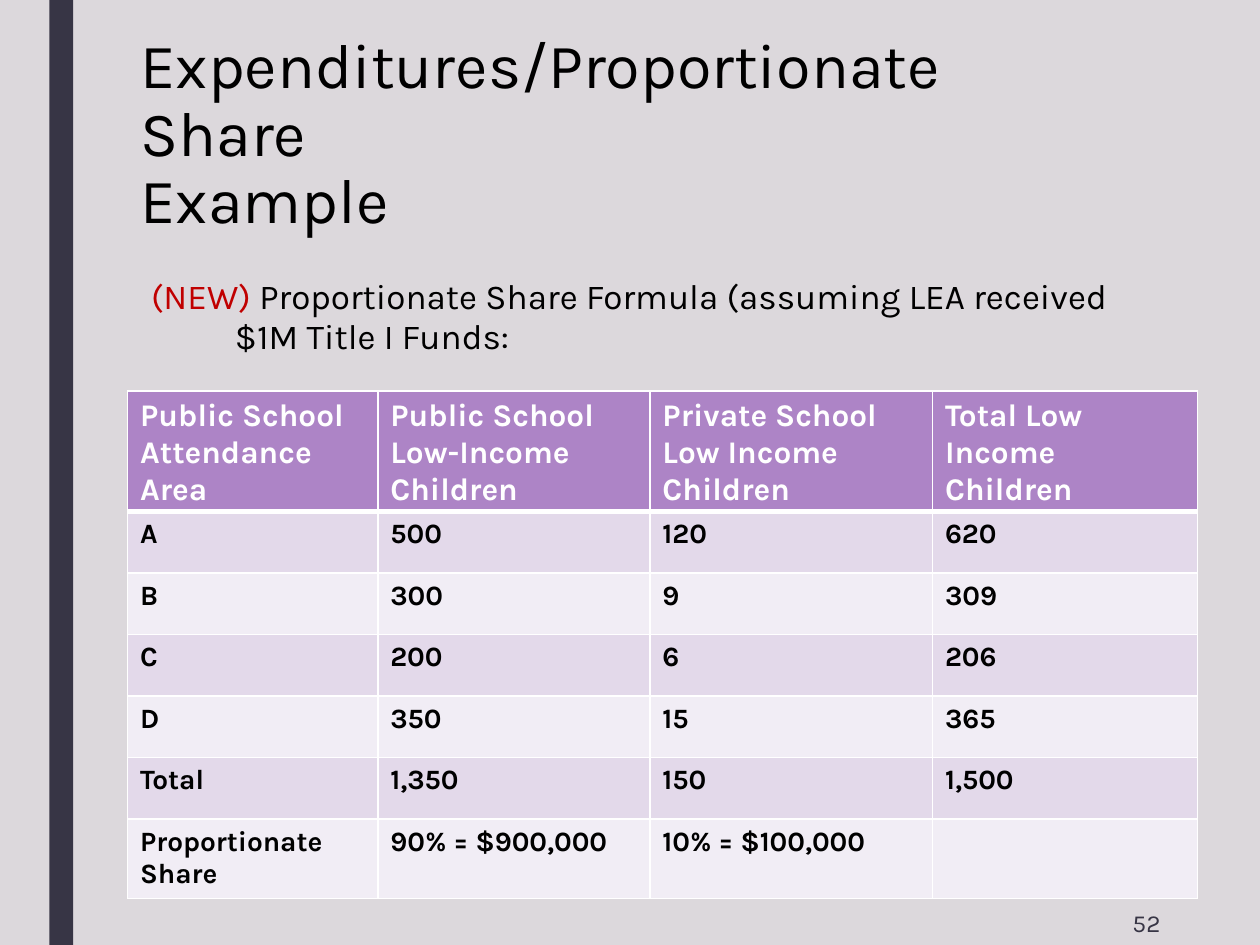
"""Build the proportionate share example slide with its school table."""
from dataclasses import dataclass

from lxml.etree import SubElement
from pptx import Presentation
from pptx.dml.color import RGBColor
from pptx.enum.shapes import MSO_SHAPE as Shape
from pptx.enum.text import MSO_ANCHOR as Anchor, PP_ALIGN as Align
from pptx.oxml.ns import qn
from pptx.util import Pt


@dataclass(frozen=True)
class Theme:
    font: str = "Karla"
    background: str = "DCD8DC"
    dark: str = "373545"
    black: str = "000000"
    white: str = "FFFFFF"
    red: str = "C00000"
    header: str = "AD84C6"
    bands: tuple = ("E3D9EA", "F1EDF5")
    title_size: int = 36
    body_size: int = 20
    header_size: int = 18
    cell_size: int = 16
    number_size: int = 14


theme = Theme()


def write(paragraph, text, *, size, color, bold=False):
    for index, line in enumerate(text.split("\n")):
        if index:
            paragraph.add_line_break()
        run = paragraph.add_run()
        run.text = line
        run.font.name = theme.font
        run.font.size = Pt(size)
        run.font.bold = bold
        run.font.color.rgb = RGBColor.from_string(color)


def add_border(cell, side, width):
    line = SubElement(cell._tc.get_or_add_tcPr(), qn(f"a:ln{side}"), w=str(Pt(width)))
    fill = SubElement(line, qn("a:solidFill"))
    SubElement(fill, qn("a:srgbClr"), val=theme.white)


presentation = Presentation()
presentation.slide_width = Pt(720)
presentation.slide_height = Pt(540)
slide = presentation.slides.add_slide(presentation.slide_layouts[6])
slide.background.fill.solid()
slide.background.fill.fore_color.rgb = RGBColor.from_string(theme.background)

side_bar = slide.shapes.add_shape(Shape.RECTANGLE, Pt(28.2), Pt(0), Pt(13.6), Pt(540))
side_bar.shadow.inherit = False
side_bar.fill.solid()
side_bar.fill.fore_color.rgb = RGBColor.from_string(theme.dark)
side_bar.line.fill.background()

rows = [
    ("Public School Attendance Area", "Public School Low-Income Children",
     "Private School Low Income Children", "Total Low Income Children"),
    ("A", "500", "120", "620"),
    ("B", "300", "9", "309"),
    ("C", "200", "6", "206"),
    ("D", "350", "15", "365"),
    ("Total", "1,350", "150", "1,500"),
    ("Proportionate Share", "90% = $900,000", "10% = $100,000", ""),
]
column_widths = (143, 155.5, 161.5, 151.5)
row_heights = (51.1, *[35.15] * 5, 45.4)
table = slide.shapes.add_table(len(rows), len(column_widths), Pt(72.9), Pt(223.4),
                               Pt(sum(column_widths)), Pt(sum(row_heights))).table
for column, width in zip(table.columns, column_widths):
    column.width = Pt(width)
for row, height in zip(table.rows, row_heights):
    row.height = Pt(height)

for row_index, values in enumerate(rows):
    is_header = row_index == 0
    fill_color = theme.header if is_header else theme.bands[(row_index - 1) % 2]
    for column_index, value in enumerate(values):
        cell = table.cell(row_index, column_index)
        if is_header:
            cell.margin_bottom = Pt(2)
        for side in "LRTB":
            heavy = (side, row_index) in (("B", 0), ("T", 1))
            add_border(cell, side, 3 if heavy else 1)
        cell.fill.solid()
        cell.fill.fore_color.rgb = RGBColor.from_string(fill_color)
        if value:
            write(cell.text_frame.paragraphs[0], value, bold=True,
                  size=theme.header_size if is_header else theme.cell_size,
                  color=theme.white if is_header else theme.black)

text_boxes = {
    "title": (73.2, 22.3, 567, 116.6, Anchor.BOTTOM),
    "formula": (79.2, 155.5, 596.9, 56.9, Anchor.TOP),
    "number": (559.4, 514, 110.9, 26, Anchor.MIDDLE),
}
paragraphs = {}
for name, (left, top, width, height, anchor) in text_boxes.items():
    text_box = slide.shapes.add_textbox(Pt(left), Pt(top), Pt(width), Pt(height))
    text_box.text_frame.word_wrap = True
    text_box.text_frame.vertical_anchor = anchor
    paragraphs[name] = text_box.text_frame.paragraphs[0]

paragraphs["title"].line_spacing = 0.89
write(paragraphs["title"], "Expenditures/Proportionate Share\nExample",
      size=theme.title_size, color=theme.black)

formula = paragraphs["formula"]
formula.line_spacing = 0.94
formula.space_before = Pt(10)
formula.space_after = Pt(2)
formula_properties = formula._p.get_or_add_pPr()
formula_properties.set("marL", str(Pt(48)))
formula_properties.set("indent", str(Pt(-48)))
write(formula, "(NEW) ", size=theme.body_size, color=theme.red)
write(formula, "Proportionate Share Formula (assuming LEA received $1M Title I Funds:",
      size=theme.body_size, color=theme.black)

paragraphs["number"].alignment = Align.RIGHT
write(paragraphs["number"], "52", size=theme.number_size, color=theme.dark)

presentation.save("out.pptx")
